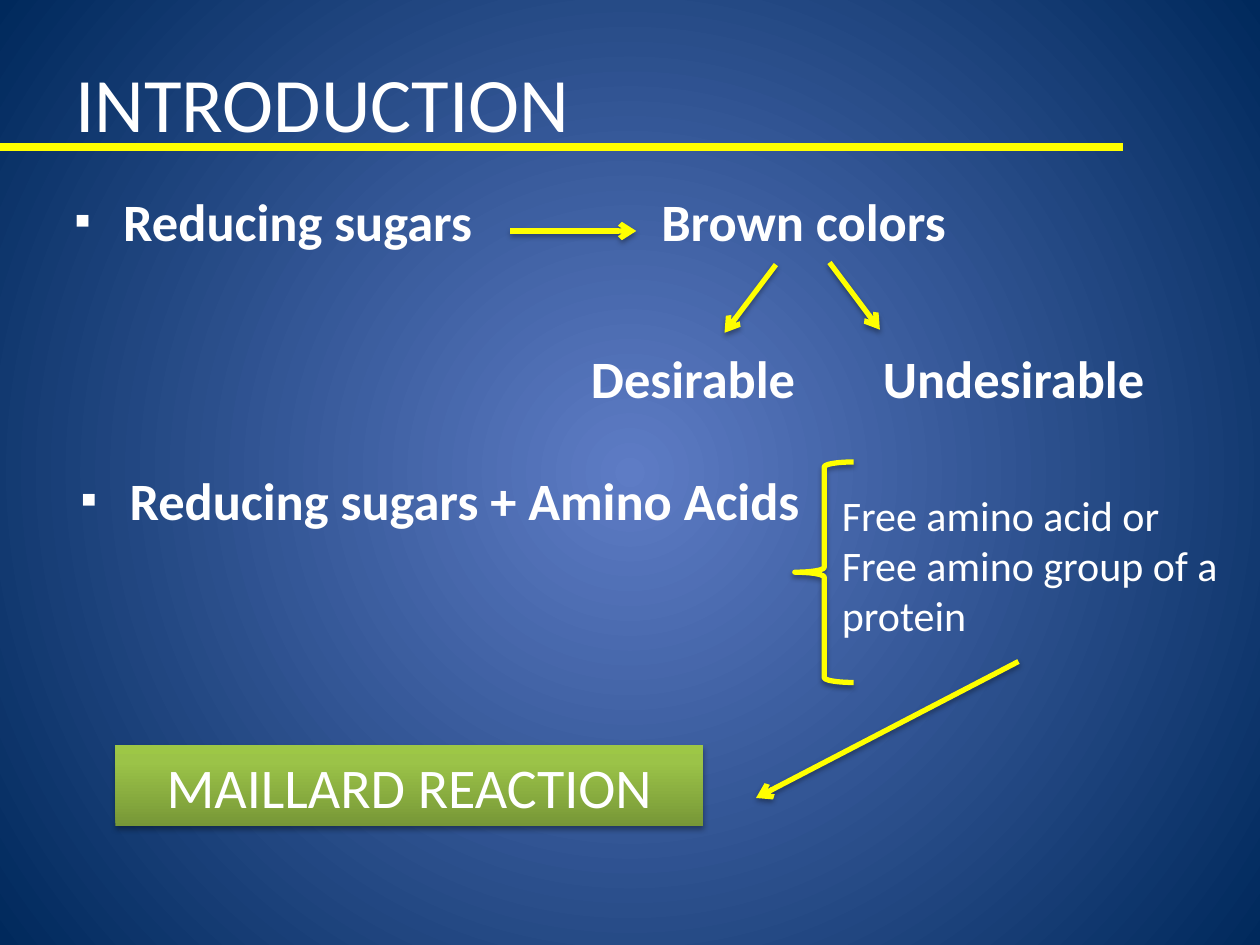
from lxml.etree import SubElement
from pptx import Presentation
from pptx.dml.color import RGBColor
from pptx.enum.shapes import MSO_CONNECTOR, MSO_SHAPE
from pptx.enum.text import MSO_ANCHOR, PP_ALIGN
from pptx.oxml import parse_xml
from pptx.oxml.ns import nsdecls, qn
from pptx.util import Inches, Pt

COLORS = {
    "text": "FFFFFF",
    "accent": "FFFF00",
    "center": "5E7CC5",
    "edge": "00295C",
    "green_dark": "779737",
    "green_mid": "9BC348",
    "green_light": "9DC746",
    "shadow": "000000",
}
FONT = "Calibri"
COLUMNS, ROWS = 120, 90
WIDTH, HEIGHT = Inches(10), Inches(7.5)


def color(name):
    """Return the named colour."""
    return RGBColor.from_string(COLORS[name])


def place(*cells):
    """Turn alternating columns and rows into slide lengths."""
    units = (WIDTH / COLUMNS, HEIGHT / ROWS)
    return [round(cell * units[index % 2]) for index, cell in enumerate(cells)]


def set_gradient(element, fill, stops, direction):
    """Give a fill its stops and its direction."""
    fill.gradient()
    gradient = element.xpath(".//a:gradFill")[0]
    stop_xml = "".join(
        f'<a:gs pos="{share * 1000}"><a:srgbClr val="{COLORS[name]}"/></a:gs>'
        for share, name in stops
    )
    gradient.getparent().replace(gradient, parse_xml(
        f'<a:gradFill {nsdecls("a")} rotWithShape="1">'
        f"<a:gsLst>{stop_xml}</a:gsLst>{direction}</a:gradFill>"
    ))


def set_effects(shape, shadow=True):
    """Give a shape a soft shadow below it, or none."""
    properties = shape.element.spPr
    for effects in properties.findall(qn("a:effectLst")):
        properties.remove(effects)
    effects = SubElement(properties, qn("a:effectLst"))
    if shadow:
        outer = SubElement(effects, qn("a:outerShdw"), blurRad=str(Pt(3.1)),
                           dist=str(Pt(1.8)), dir="5400000", rotWithShape="0")
        tint = SubElement(outer, qn("a:srgbClr"), val=COLORS["shadow"])
        SubElement(tint, qn("a:alpha"), val="35000")


def set_bullet(paragraph):
    """Add a small square bullet with a hanging indent."""
    properties = paragraph._p.get_or_add_pPr()
    properties.set("marL", str(Inches(0.38)))
    properties.set("indent", str(-Inches(0.38)))
    tint = SubElement(properties, qn("a:buClr"))
    SubElement(tint, qn("a:srgbClr"), val=COLORS["text"])
    SubElement(properties, qn("a:buSzPct"), val="46000")
    SubElement(properties, qn("a:buFont"), typeface="Arial")
    SubElement(properties, qn("a:buChar"), char="■")


def write(frame, lines, size, bold=False, alignment=PP_ALIGN.LEFT, bullet=False):
    """Write each line as a paragraph with one run."""
    frame.word_wrap = True
    for index, line in enumerate(lines):
        paragraph = frame.add_paragraph() if index else frame.paragraphs[0]
        paragraph.alignment = alignment
        if bullet:
            set_bullet(paragraph)
        run = paragraph.add_run()
        run.text = line
        run.font.name = FONT
        run.font.size = Pt(size)
        run.font.bold = bold
        run.font.color.rgb = color("text")


def add_text(slide, cells, lines, size, anchor=MSO_ANCHOR.TOP, **style):
    """Add a text box."""
    frame = slide.shapes.add_textbox(*place(*cells)).text_frame
    frame.vertical_anchor = anchor
    write(frame, lines, size, **style)


def add_line(slide, cells, width, arrow=True):
    """Add a plain rule or a shadowed arrow."""
    line = slide.shapes.add_connector(MSO_CONNECTOR.STRAIGHT, *place(*cells))
    line.line.color.rgb = color("accent")
    line.line.width = Pt(width)
    if arrow:
        SubElement(line.line._get_or_add_ln(), qn("a:tailEnd"), type="arrow")
    set_effects(line, shadow=arrow)


def add_brace(slide, cells):
    """Add a left brace."""
    brace = slide.shapes.add_shape(MSO_SHAPE.LEFT_BRACE, *place(*cells))
    brace.fill.background()
    brace.line.color.rgb = color("accent")
    brace.line.width = Pt(3)
    set_effects(brace)


def add_banner(slide, cells, text):
    """Add a green banner with centred text."""
    banner = slide.shapes.add_shape(MSO_SHAPE.RECTANGLE, *place(*cells))
    stops = [(0, "green_dark"), (80, "green_mid"), (100, "green_light")]
    set_gradient(banner.element, banner.fill, stops,
                 '<a:lin ang="16200000" scaled="0"/>')
    banner.line.fill.background()
    set_effects(banner)
    write(banner.text_frame, [text], 32, alignment=PP_ALIGN.CENTER)


def main():
    """Build the introduction slide."""
    presentation = Presentation()
    presentation.slide_width, presentation.slide_height = WIDTH, HEIGHT
    slide = presentation.slides.add_slide(presentation.slide_layouts[6])
    set_gradient(
        slide.element, slide.background.fill, [(0, "center"), (100, "edge")],
        '<a:path path="circle"><a:fillToRect l="50000" t="50000" '
        'r="50000" b="50000"/></a:path>',
    )

    add_text(slide, (6, 2.2, 108, 15), ["INTRODUCTION"], 44, MSO_ANCHOR.MIDDLE)
    add_line(slide, (0, 14, 107, 14), 4.5, arrow=False)

    for cells, text in [
        ((6, 17.4, 54, 7.3), "Reducing sugars"),
        ((6.6, 44, 72, 7.3), "Reducing sugars + Amino Acids"),
    ]:
        add_text(slide, cells, [text], 30, bold=True, bullet=True)

    for cells, text in [
        ((61.8, 17.4, 32, 7.3), "Brown colors"),
        ((55.1, 32.4, 25.3, 7.3), "Desirable"),
        ((82.9, 32.4, 28.1, 7.3), "Undesirable"),
    ]:
        add_text(slide, cells, [text], 30, bold=True)

    add_brace(slide, (75.7, 44, 5.6, 21))
    add_text(slide, (79, 46, 41, 20.6),
             ["Free amino acid or", "Free amino group of a protein"], 24)

    for cells in [
        (48.6, 22, 60.6, 22),
        (73.9, 25.2, 69, 31.7),
        (79, 25, 83.8, 31.4),
        (97, 63, 72, 76),
    ]:
        add_line(slide, cells, 3)

    add_banner(slide, (11, 71, 56, 7.7), "MAILLARD REACTION")
    presentation.save("out.pptx")


if __name__ == "__main__":
    main()
